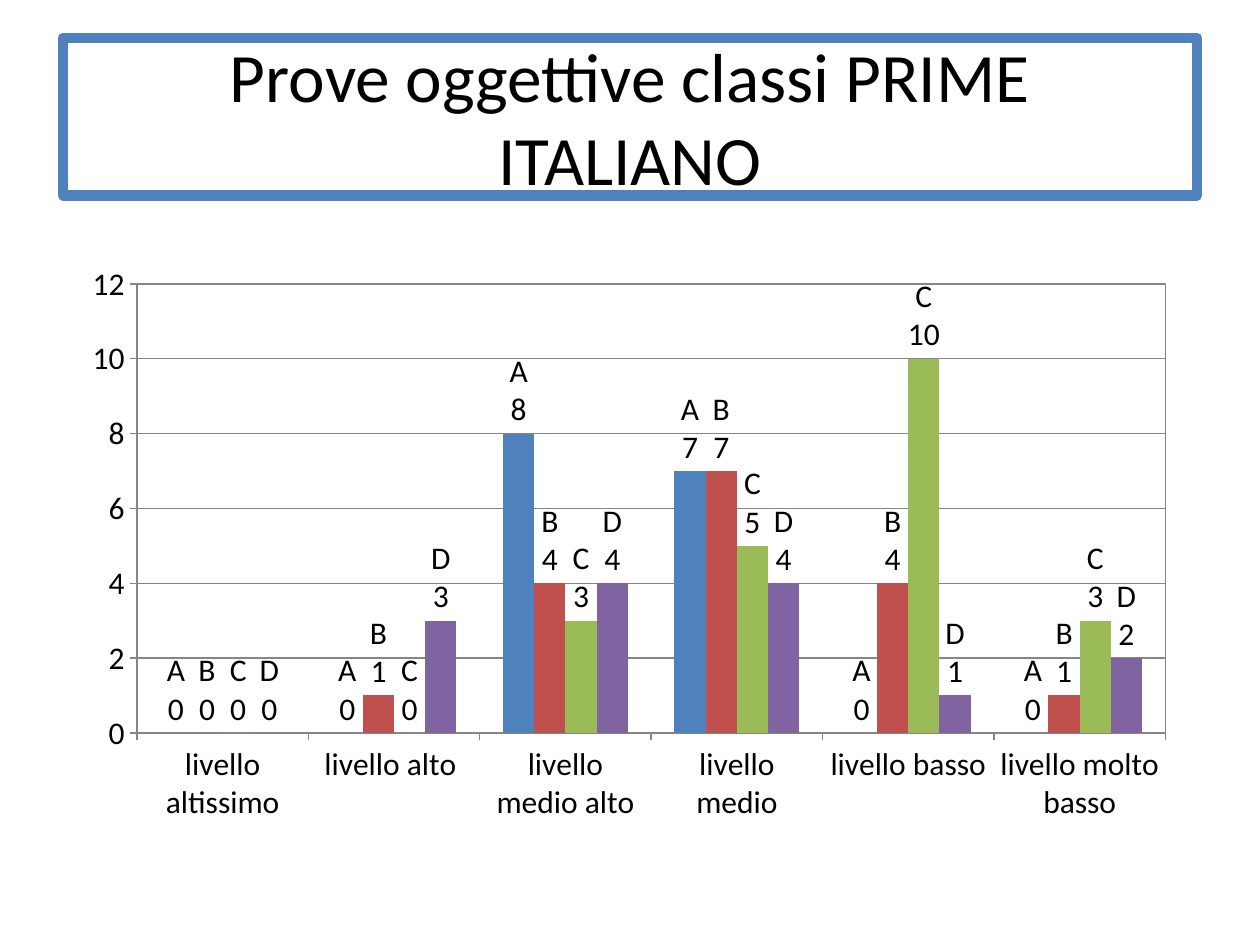
from lxml.etree import SubElement
from pptx import Presentation
from pptx.chart.data import CategoryChartData
from pptx.dml.color import RGBColor
from pptx.enum.chart import XL_CHART_TYPE, XL_LABEL_POSITION, XL_TICK_MARK
from pptx.enum.text import MSO_ANCHOR, PP_ALIGN
from pptx.oxml import parse_xml
from pptx.oxml.ns import nsdecls, qn
from pptx.util import Inches, Pt

BLACK = RGBColor(0x00, 0x00, 0x00)
GRAY = RGBColor(0x86, 0x86, 0x86)
BLUE = RGBColor(0x4F, 0x81, 0xBD)
RED = RGBColor(0xC0, 0x50, 0x4D)
GREEN = RGBColor(0x9B, 0xBB, 0x59)
PURPLE = RGBColor(0x80, 0x64, 0xA2)
FONT = "Calibri"

LEVELS = ["livello altissimo", "livello alto ", "livello medio alto",
          "livello medio", "livello basso", "livello molto basso"]
CLASSES = [
    ("A", BLUE, (0, 0, 8, 7, 0, 0)),
    ("B", RED, (0, 1, 4, 7, 4, 1)),
    ("C", GREEN, (0, 0, 3, 5, 10, 3)),
    ("D", PURPLE, (0, 3, 4, 4, 1, 2)),
]
PLOT_LAYOUT = {"x": 0.073, "y": 0.031, "w": 0.907, "h": 0.72}


def set_font(font, size):
    font.name = FONT
    font.size = Pt(size)
    font.color.rgb = BLACK


def add_title(page, text):
    box = page.shapes.add_textbox(Inches(0.5), Inches(0.3), Inches(9), Inches(1.25))
    box.line.color.rgb = BLUE
    box.line.width = Pt(6)
    frame = box.text_frame
    frame.word_wrap = True
    frame.vertical_anchor = MSO_ANCHOR.MIDDLE
    para = frame.paragraphs[0]
    para.text = text
    para.alignment = PP_ALIGN.CENTER
    for span in para.runs:
        set_font(span.font, 39.6)


def place_plot(chart):
    """Fix the inner plot area and outline it."""
    area = chart._chartSpace.chart.plotArea
    for old in area.findall(qn("c:layout")):
        area.remove(old)
    layout = parse_xml(f"<c:layout {nsdecls('c')}><c:manualLayout/></c:layout>")
    manual = layout[0]
    SubElement(manual, qn("c:layoutTarget")).set("val", "inner")
    for side in "xy":
        SubElement(manual, qn(f"c:{side}Mode")).set("val", "edge")
    for name, value in PLOT_LAYOUT.items():
        SubElement(manual, qn(f"c:{name}")).set("val", str(value))
    area.insert(0, layout)
    area.append(parse_xml(
        f'<c:spPr {nsdecls("c", "a")}><a:noFill/><a:ln w="9525"><a:solidFill>'
        f'<a:srgbClr val="{GRAY}"/></a:solidFill></a:ln></c:spPr>'))


def label_series(series):
    """Show the class name above its value."""
    labels = series.data_labels
    labels.show_value = True
    labels.show_series_name = True
    labels.position = XL_LABEL_POSITION.OUTSIDE_END
    set_font(labels.font, 18)
    separator = parse_xml(f"<c:separator {nsdecls('c')}>\n</c:separator>")
    labels._element.find(qn("c:showBubbleSize")).addnext(separator)


def style_axis(axis):
    axis.major_tick_mark = XL_TICK_MARK.OUTSIDE
    axis.minor_tick_mark = XL_TICK_MARK.NONE
    axis.format.line.color.rgb = GRAY
    set_font(axis.tick_labels.font, 18)


def add_results_chart(page):
    data = CategoryChartData()
    data.categories = LEVELS
    for name, _, values in CLASSES:
        data.add_series(name, values)
    chart = page.shapes.add_chart(
        XL_CHART_TYPE.COLUMN_CLUSTERED,
        Inches(0.43), Inches(2.1), Inches(9), Inches(4.95), data).chart
    chart.has_title = False
    chart.has_legend = False
    set_font(chart.font, 18)

    # Columns
    plot = chart.plots[0]
    plot.gap_width = 150
    plot.overlap = 0
    plot.vary_by_categories = False
    for series, (_, color, _) in zip(plot.series, CLASSES):
        series.format.fill.solid()
        series.format.fill.fore_color.rgb = color
        label_series(series)

    # Axes
    style_axis(chart.category_axis)
    scale = chart.value_axis
    style_axis(scale)
    scale.minimum_scale, scale.maximum_scale, scale.major_unit = 0, 12, 2
    scale.has_major_gridlines = True
    scale.major_gridlines.format.line.color.rgb = GRAY
    place_plot(chart)


def main():
    deck = Presentation()
    deck.slide_width = Inches(10)
    deck.slide_height = Inches(7.5)
    page = deck.slides.add_slide(deck.slide_layouts[6])
    add_title(page, "Prove oggettive classi PRIME\vITALIANO")
    add_results_chart(page)
    deck.save("out.pptx")


if __name__ == "__main__":
    main()
